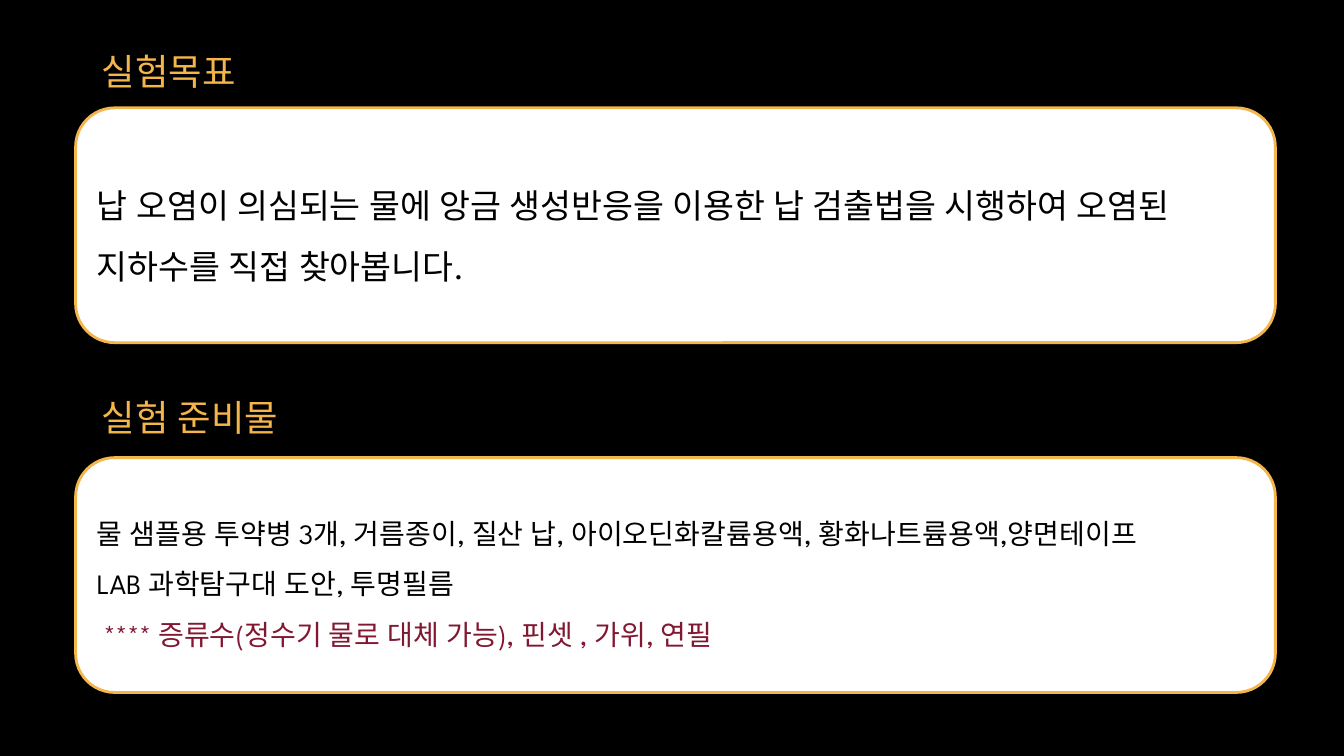
from lxml.etree import SubElement
from pptx import Presentation
from pptx.dml.color import RGBColor
from pptx.enum.shapes import MSO_SHAPE
from pptx.enum.text import MSO_ANCHOR, PP_ALIGN
from pptx.oxml.ns import qn
from pptx.util import Inches, Pt

BLACK = RGBColor(0x00, 0x00, 0x00)
WHITE = RGBColor(0xFF, 0xFF, 0xFF)
GOLD = RGBColor(0xF4, 0xB5, 0x4B)
WINE = RGBColor(0x81, 0x17, 0x31)
FONT = "League Spartan"

GOAL = [("납 오염이 의심되는 물에 앙금 생성반응을 이용한 납 검출법을 "
         "시행하여 오염된 지하수를 직접 찾아봅니다.", BLACK)]
ITEMS = [
    ("물 샘플용 투약병 3개, 거름종이, 질산 납, 아이오딘화칼륨용액, 황화나트륨용액,양면테이프", BLACK),
    ("LAB 과학탐구대 도안, 투명필름", BLACK),
    (" **** 증류수(정수기 물로 대체 가능), 핀셋 , 가위, 연필", WINE),
]


def write(frame, lines, size, **style):
    """Fill a text frame with one paragraph per (text, colour) pair."""
    frame.word_wrap = True
    for i, (text, color) in enumerate(lines):
        para = frame.paragraphs[0] if i == 0 else frame.add_paragraph()
        for name, value in {"alignment": PP_ALIGN.LEFT, **style}.items():
            setattr(para, name, value)
        run = para.add_run()
        run.text = text
        for name, value in {"name": FONT, "size": Pt(size)}.items():
            setattr(run.font, name, value)
        run.font.color.rgb = color
        SubElement(run.font._element, qn("a:ea"), typeface=FONT)


def add_title(slide, left, top, width, text):
    """Place a gold section heading at the given spot."""
    frame = slide.shapes.add_textbox(
        Inches(left), Inches(top), Inches(width), Inches(0.48)).text_frame
    for side in ("left", "top", "right", "bottom"):
        setattr(frame, f"margin_{side}", Inches(0.1))
    write(frame, [(text, GOLD)], 26)


def add_panel(slide, left, top, width, height, lines, size):
    """Place a white rounded panel with a gold edge and its text."""
    panel = slide.shapes.add_shape(
        MSO_SHAPE.ROUNDED_RECTANGLE,
        Inches(left), Inches(top), Inches(width), Inches(height))
    panel.shadow.inherit = False
    panel.fill.solid()
    panel.fill.fore_color.rgb = WHITE
    panel.line.color.rgb = GOLD
    panel.line.width = Pt(2)
    panel.text_frame.vertical_anchor = MSO_ANCHOR.MIDDLE
    write(panel.text_frame, lines, size, line_spacing=1.5)


def main():
    """Build the lab goal and supplies slide."""
    deck = Presentation()
    deck.slide_width, deck.slide_height = Inches(13.33), Inches(7.5)
    slide = deck.slides.add_slide(deck.slide_layouts[6])
    slide.background.fill.solid()
    slide.background.fill.fore_color.rgb = BLACK
    add_title(slide, 0.91, 0.39, 1.96, "실험목표")
    add_panel(slide, 0.75, 1.07, 11.9, 2.33, GOAL, 24)
    add_title(slide, 0.91, 3.82, 2.3, "실험 준비물")
    add_panel(slide, 0.75, 4.54, 11.9, 2.33, ITEMS, 20)
    deck.save("out.pptx")


if __name__ == "__main__":
    main()
